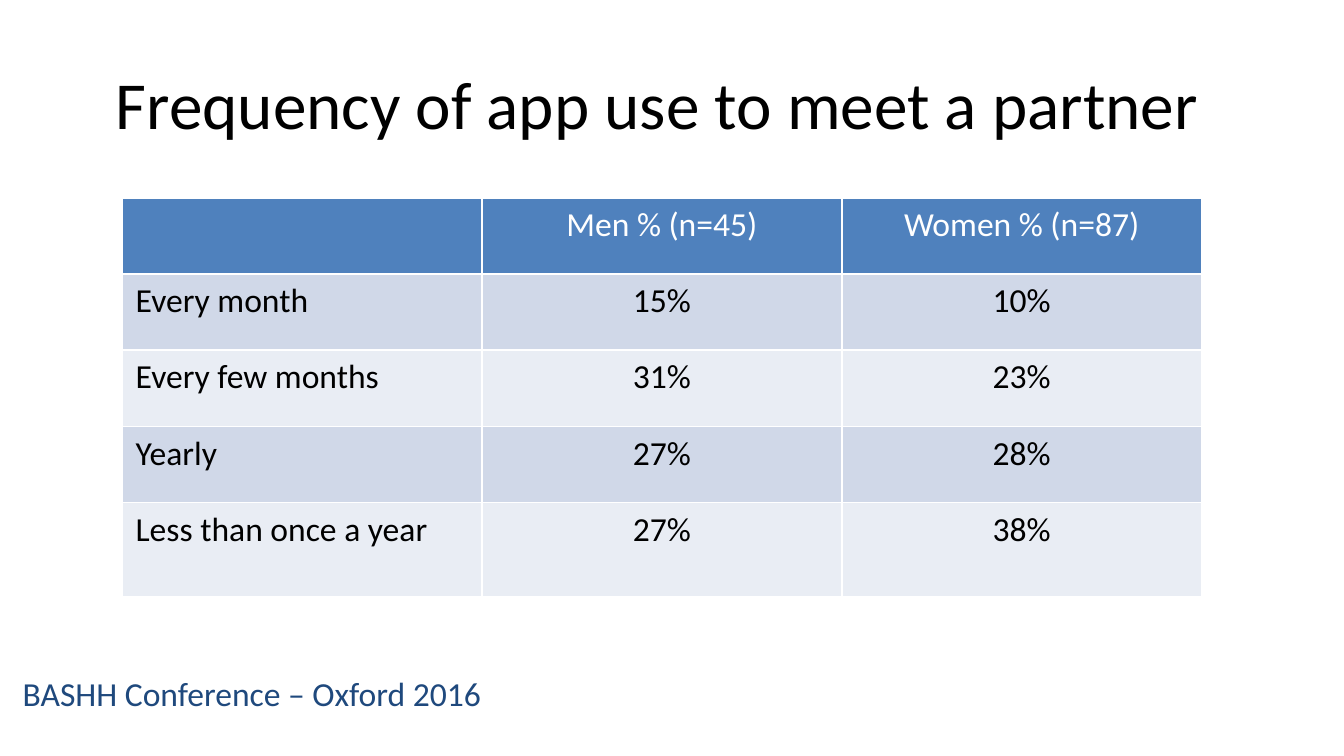
"""Build a slide with a table of how often men and women use apps to meet a partner."""
from pptx import Presentation
from pptx.dml.color import RGBColor
from pptx.enum.text import MSO_ANCHOR, PP_ALIGN as Align
from pptx.util import Cm, Pt

BLACK = RGBColor(0x00, 0x00, 0x00)
WHITE = RGBColor(0xFF, 0xFF, 0xFF)
NAVY = RGBColor(0x1F, 0x49, 0x7D)
HEADER = RGBColor(0x4F, 0x81, 0xBD)
BANDS = (RGBColor(0xE9, 0xED, 0xF4), RGBColor(0xD0, 0xD8, 0xE8))

ROWS = (
    ("", "Men % (n=45)", "Women % (n=87)"),
    ("Every month", "15%", "10%"),
    ("Every few months", "31%", "23%"),
    ("Yearly", "27%", "28%"),
    ("Less than once a year", "27%", "38%"),
)
ROW_HEIGHTS = (1.44, 1.44, 1.44, 1.44, 1.78)
COLUMN_WIDTH = 6.8


def write(tf, text, color, size=18, align=Align.LEFT):
    """Fill a text frame with one formatted paragraph."""
    p = tf.paragraphs[0]
    p.alignment = align
    r = p.add_run()
    r.text = text
    r.font.color.rgb = color
    for name, value in {"name": "Calibri", "size": Pt(size), "bold": False}.items():
        setattr(r.font, name, value)


def add_title(s, text):
    """Place and format the title placeholder."""
    sp = s.shapes.title
    box = {"left": 0.71, "top": 0.74, "width": 23.42, "height": 2.39}
    for name, value in box.items():
        setattr(sp, name, Cm(value))
    sp.text_frame.vertical_anchor = MSO_ANCHOR.MIDDLE
    write(sp.text_frame, text, BLACK, 36, Align.CENTER)


def add_footer(s, text):
    """Add the conference line at the bottom left."""
    sp = s.shapes.add_textbox(Cm(0.18), Cm(12.6), Cm(12.14), Cm(1.75))
    sp.text_frame.word_wrap = True
    write(sp.text_frame, text, NAVY)


def add_frequency_table(s):
    """Add the table with a header row and banded body rows."""
    cols = len(ROWS[0])
    table = s.shapes.add_table(
        len(ROWS), cols, Cm(2.31), Cm(3.74),
        Cm(COLUMN_WIDTH * cols), Cm(sum(ROW_HEIGHTS)),
    ).table
    for column in table.columns:
        column.width = Cm(COLUMN_WIDTH)
    for i, (texts, height) in enumerate(zip(ROWS, ROW_HEIGHTS)):
        table.rows[i].height = Cm(height)
        for j, text in enumerate(texts):
            cell = table.cell(i, j)
            cell.fill.solid()
            cell.fill.fore_color.rgb = BANDS[i % 2] if i else HEADER
            if text:
                write(cell.text_frame, text, BLACK if i else WHITE,
                      align=Align.CENTER if j else Align.LEFT)


def main():
    """Create and save the presentation."""
    prs = Presentation()
    prs.slide_width, prs.slide_height = Cm(25.4), Cm(14.29)
    s = prs.slides.add_slide(prs.slide_layouts[5])
    add_footer(s, "BASHH Conference – Oxford 2016")
    add_title(s, "Frequency of app use to meet a partner")
    add_frequency_table(s)
    prs.save("out.pptx")


if __name__ == "__main__":
    main()
